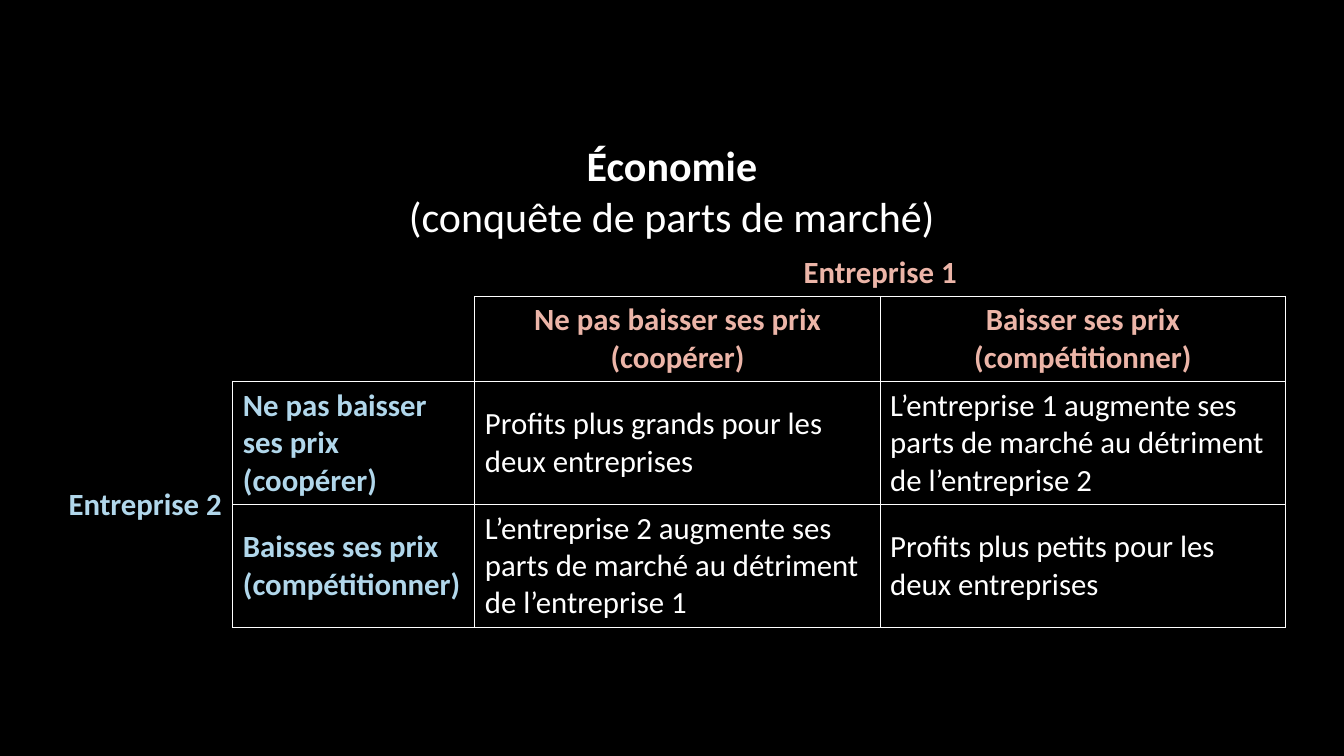
from dataclasses import dataclass

from lxml.etree import SubElement
from pptx import Presentation
from pptx.dml.color import RGBColor
from pptx.enum.text import MSO_ANCHOR, PP_ALIGN
from pptx.oxml.ns import qn
from pptx.util import Inches, Pt


@dataclass(frozen=True)
class Theme:
    font: str = "Calibri"
    background: str = "000000"
    text: str = "FFFFFF"
    company_1: str = "ECB5A8"
    company_2: str = "B1D7EB"
    heading_size: int = 30
    body_size: int = 22
    border_width: int = 1


THEME = Theme()

COLUMN_WIDTHS = (1.73, 2.4, 4.02, 4.02)
ROW_HEIGHTS = (1.12, 0.47, 0.84, 1.22, 1.22)
MERGES = (((0, 0), (0, 3)), ((1, 2), (1, 3)), ((3, 0), (4, 0)))

COMPANY_1_LABELS = {
    (1, 2): "Entreprise 1",
    (2, 2): "Ne pas baisser ses prix\n(coopérer)",
    (2, 3): "Baisser ses prix\n(compétitionner)",
}
COMPANY_2_LABELS = {
    (3, 0): "Entreprise 2",
    (3, 1): "Ne pas baisser ses prix (coopérer)",
    (4, 1): "Baisses ses prix\n(compétitionner)",
}
OUTCOMES = {
    (3, 2): "Profits plus grands pour les deux entreprises",
    (3, 3): "L’entreprise 1 augmente ses parts de marché au détriment de l’entreprise 2",
    (4, 2): "L’entreprise 2 augmente ses parts de marché au détriment de l’entreprise 1",
    (4, 3): "Profits plus petits pour les deux entreprises",
}


def is_framed(row, column):
    """Tell whether a grid position belongs to the outlined payoff matrix."""
    inside = 2 <= row < len(ROW_HEIGHTS) and 1 <= column < len(COLUMN_WIDTHS)
    return inside and (row, column) != (2, 1)


def set_borders(cell, row, column):
    """Draw each edge that touches a framed cell and clear the others."""
    properties = cell._tc.get_or_add_tcPr()
    neighbours = {
        "a:lnL": (row, column - 1),
        "a:lnR": (row, column + 1),
        "a:lnT": (row - 1, column),
        "a:lnB": (row + 1, column),
    }
    for tag, neighbour in neighbours.items():
        line = SubElement(properties, qn(tag), w=str(Pt(THEME.border_width)))
        if is_framed(row, column) or is_framed(*neighbour):
            fill = SubElement(line, qn("a:solidFill"))
            SubElement(fill, qn("a:srgbClr"), val=THEME.text)
        else:
            SubElement(line, qn("a:noFill"))


def write_cell(cell, text, color, size=THEME.body_size, bold=False, alignment=PP_ALIGN.LEFT):
    cell.text_frame.text = text
    cell.vertical_anchor = MSO_ANCHOR.MIDDLE
    for paragraph in cell.text_frame.paragraphs:
        paragraph.alignment = alignment
        for run in paragraph.runs:
            run.font.name = THEME.font
            run.font.size = Pt(size)
            run.font.bold = bold
            run.font.color.rgb = RGBColor.from_string(color)


def add_matrix_table(slide):
    """Add the bare grid: sizes, borders, transparent fills and merged cells."""
    frame = slide.shapes.add_table(
        len(ROW_HEIGHTS), len(COLUMN_WIDTHS), Inches(0.58), Inches(1.35),
        Inches(sum(COLUMN_WIDTHS)), Inches(sum(ROW_HEIGHTS)))
    table = frame.table
    table.first_row = False
    table.horz_banding = False
    for column, width in zip(table.columns, COLUMN_WIDTHS):
        column.width = Inches(width)
    for row, height in zip(table.rows, ROW_HEIGHTS):
        row.height = Inches(height)
    for row in range(len(ROW_HEIGHTS)):
        for column in range(len(COLUMN_WIDTHS)):
            cell = table.cell(row, column)
            set_borders(cell, row, column)
            cell.fill.background()
    for first, last in MERGES:
        table.cell(*first).merge(table.cell(*last))
    return table


def fill_table(table):
    heading = table.cell(0, 0)
    write_cell(heading, "Économie\n(conquête de parts de marché)", THEME.text,
               THEME.heading_size, alignment=PP_ALIGN.CENTER)
    heading.text_frame.paragraphs[0].runs[0].font.bold = True
    for position, text in COMPANY_1_LABELS.items():
        write_cell(table.cell(*position), text, THEME.company_1,
                   bold=True, alignment=PP_ALIGN.CENTER)
    for position, text in COMPANY_2_LABELS.items():
        write_cell(table.cell(*position), text, THEME.company_2, bold=True)
    for position, text in OUTCOMES.items():
        write_cell(table.cell(*position), text, THEME.text)


def main():
    presentation = Presentation()
    presentation.slide_width = Inches(13.33)
    presentation.slide_height = Inches(7.5)
    blank_layout = presentation.slide_layouts[6]
    slide = presentation.slides.add_slide(blank_layout)
    background = slide.background.fill
    background.solid()
    background.fore_color.rgb = RGBColor.from_string(THEME.background)
    fill_table(add_matrix_table(slide))
    presentation.save("out.pptx")


if __name__ == "__main__":
    main()
